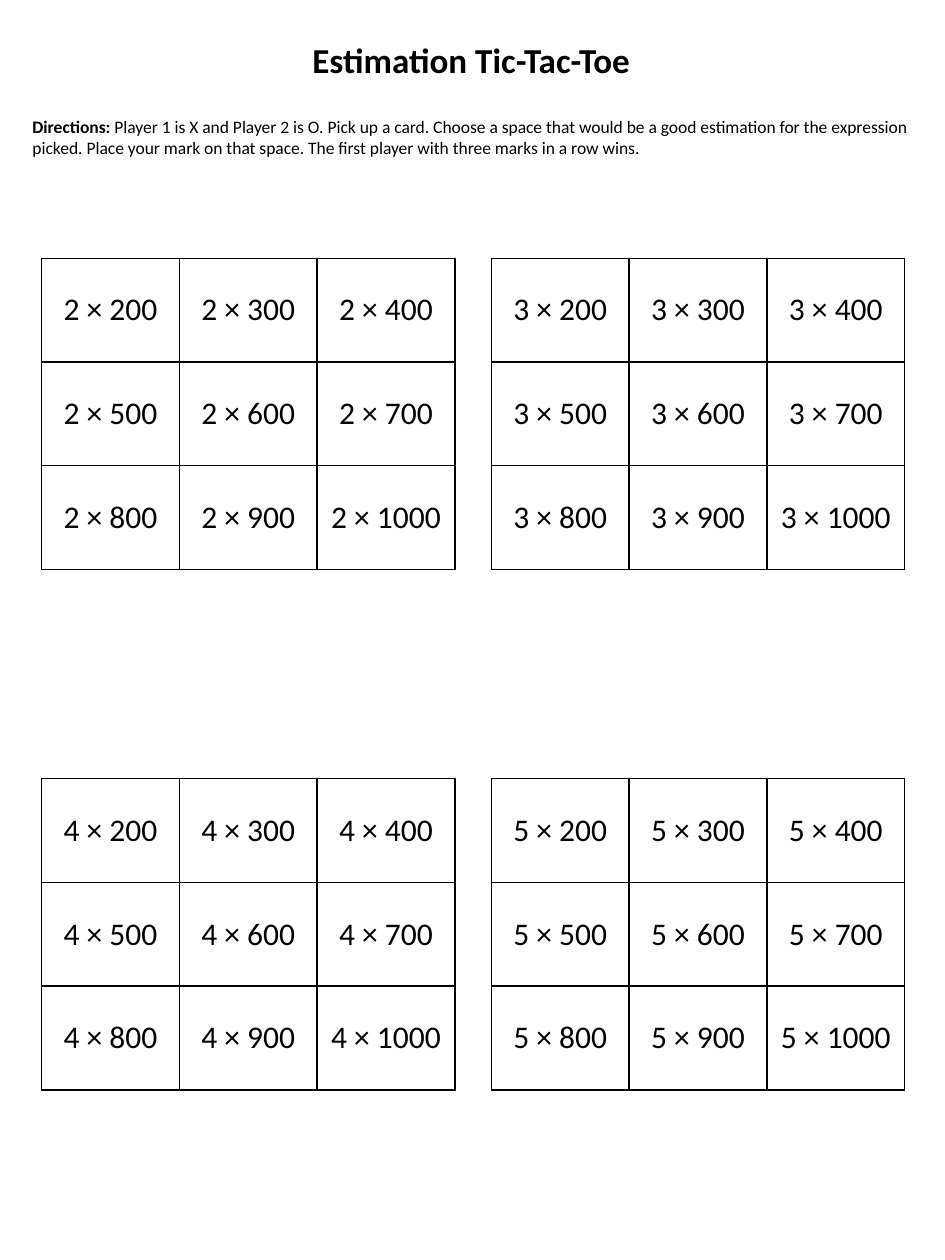
import dataclasses

import lxml.etree
import pptx
import pptx.dml.color
import pptx.enum.shapes
import pptx.enum.text
import pptx.oxml.ns
import pptx.util

TITLE_ONLY = 5
GRID_COLUMNS, GRID_ROWS = 75, 100
CENTER = pptx.enum.text.PP_ALIGN.CENTER
LEFT = pptx.enum.text.PP_ALIGN.LEFT
MIDDLE = pptx.enum.text.MSO_ANCHOR.MIDDLE


@dataclasses.dataclass(frozen=True)
class Theme:
    font: str = "Calibri"
    ink: str = "000000"
    paper: str = "FFFFFF"
    title_size: int = 20
    directions_size: int = 10
    cell_size: int = 18
    line_width: int = 1


class Worksheet:
    def __init__(self, deck, theme):
        self.deck = deck
        self.theme = theme
        self.page = deck.slides.add_slide(deck.slide_layouts[TITLE_ONLY])

    def area(self, left, top, width, height):
        """Turn grid columns and rows into slide lengths."""
        column = self.deck.slide_width / GRID_COLUMNS
        row = self.deck.slide_height / GRID_ROWS
        return [round(length) for length in
                (left * column, top * row, width * column, height * row)]

    def add_spans(self, frame, spans, size, align):
        para = frame.paragraphs[0]
        para.alignment = align
        for text, bold in spans:
            span = para.add_run()
            span.text = text
            span.font.name = self.theme.font
            span.font.size = pptx.util.Pt(size)
            span.font.bold = bold
            span.font.color.rgb = pptx.dml.color.RGBColor.from_string(self.theme.ink)

    def fill_panel(self, box, spans, size, align):
        """Give a box its paper fill and outline, then its text."""
        paper = pptx.dml.color.RGBColor.from_string(self.theme.paper)
        box.fill.solid()
        box.fill.fore_color.rgb = paper
        box.line.color.rgb = paper
        box.line.width = pptx.util.Pt(self.theme.line_width)
        frame = box.text_frame
        frame.word_wrap = True
        frame.auto_size = pptx.enum.text.MSO_AUTO_SIZE.NONE
        frame.vertical_anchor = MIDDLE
        self.add_spans(frame, spans, size, align)

    def title(self, text, *place):
        box = self.page.shapes.title
        box.left, box.top, box.width, box.height = self.area(*place)
        self.fill_panel(box, [(text, True)], self.theme.title_size, CENTER)

    def directions(self, spans, *place):
        box = self.page.shapes.add_shape(
            pptx.enum.shapes.MSO_SHAPE.RECTANGLE, *self.area(*place))
        box.shadow.inherit = False
        self.fill_panel(box, spans, self.theme.directions_size, LEFT)

    def outline(self, cell):
        qn = pptx.oxml.ns.qn
        properties = cell._tc.get_or_add_tcPr()
        width = str(pptx.util.Pt(self.theme.line_width))
        for side in ("a:lnL", "a:lnR", "a:lnT", "a:lnB"):
            line = lxml.etree.SubElement(properties, qn(side), w=width)
            solid = lxml.etree.SubElement(line, qn("a:solidFill"))
            lxml.etree.SubElement(solid, qn("a:srgbClr"), val=self.theme.ink)

    def board(self, texts, columns, *place):
        rows = len(texts) // columns
        left, top, width, height = self.area(*place)
        table = self.page.shapes.add_table(
            rows, columns, left, top, width, height).table
        table.first_row = False
        table.horz_banding = False
        for cell, text in zip(table.iter_cells(), texts):
            cell.vertical_anchor = MIDDLE
            cell.margin_left = cell.margin_right = pptx.util.Inches(0.05)
            self.outline(cell)
            cell.fill.background()
            self.add_spans(cell.text_frame, [(text, False)], self.theme.cell_size, CENTER)


def main():
    deck = pptx.Presentation()
    deck.slide_width = pptx.util.Inches(7.5)
    deck.slide_height = pptx.util.Inches(10)
    sheet = Worksheet(deck, Theme())

    sheet.title("Estimation Tic-Tac-Toe", 1.6, 1.6, 71.6, 6.2)
    sheet.directions([
        ("Directions:", True),
        (" Player 1 is X and Player 2 is O. Pick up a card. Choose a space that "
         "would be a good estimation for the expression picked. Place your mark "
         "on that space. The first player with three marks in a row wins.", False),
    ], 1.6, 7.8, 71.6, 6.2)

    for index, factor in enumerate(range(2, 6)):
        row, column = divmod(index, 2)
        products = [f"{factor} × {number}" for number in range(200, 1001, 100)]
        sheet.board(products, 3, 3.3 + 35.7 * column, 20.5 + 41.3 * row, 32.8, 24.7)

    deck.save("out.pptx")


if __name__ == "__main__":
    main()
